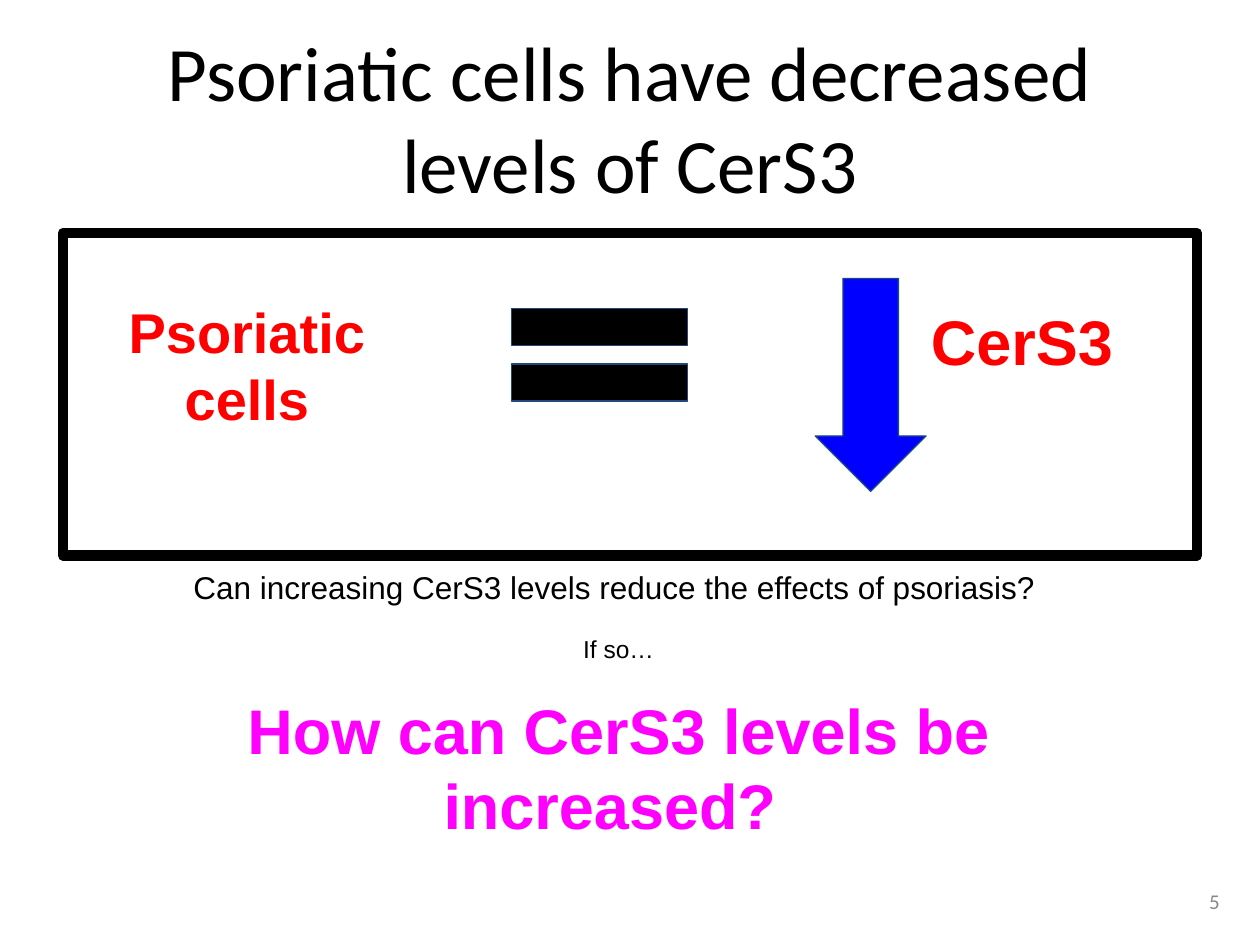
from lxml import etree
from pptx import Presentation
from pptx import util as u
from pptx.dml.color import RGBColor
from pptx.enum import shapes, text
from pptx.oxml.ns import qn

BLACK = RGBColor(0x00, 0x00, 0x00)
RED = RGBColor(0xFF, 0x00, 0x00)
BLUE = RGBColor(0x00, 0x00, 0xFF)
NAVY = RGBColor(0x1F, 0x49, 0x7D)
MAGENTA = RGBColor(0xFF, 0x00, 0xFF)
GREY = RGBColor(0x88, 0x88, 0x88)
CENTER, LEFT, RIGHT = text.PP_ALIGN.CENTER, text.PP_ALIGN.LEFT, text.PP_ALIGN.RIGHT
TOP, MIDDLE = text.MSO_ANCHOR.TOP, text.MSO_ANCHOR.MIDDLE


def add_text(page, left, top, width, height, lines, align=CENTER,
             font="Arial", anchor=TOP, inset=0.1, gap=0):
    """Add a text box; each line is (words, size, colour, bold)."""
    box = page.shapes.add_textbox(*map(u.Inches, (left, top, width, height)))
    frame = box.text_frame
    frame.word_wrap = True
    frame.vertical_anchor = anchor
    frame.margin_left = frame.margin_right = u.Inches(0.1)
    frame.margin_top = frame.margin_bottom = u.Inches(inset)
    for index, (words, size, colour, bold) in enumerate(lines):
        para = frame.add_paragraph() if index else frame.paragraphs[0]
        para.text = words
        para.alignment = align
        if index:
            para.space_before = u.Pt(gap)
        para.font.name = font
        para.font.size = u.Pt(size)
        para.font.bold = bold
        para.font.color.rgb = colour


def add_figure(page, kind, left, top, width, height, fill, line, weight):
    """Add a preset shape, unfilled when fill is None."""
    shape = page.shapes.add_shape(kind, *map(u.Inches, (left, top, width, height)))
    shape.shadow.inherit = False
    if fill is None:
        shape.fill.background()
    else:
        shape.fill.solid()
        shape.fill.fore_color.rgb = fill
    shape.line.color.rgb = line
    shape.line.width = u.Pt(weight)
    return shape


def add_equation(page, left, top, width, height):
    """Draw the framed statement: psoriatic cells equal less CerS3."""
    add_figure(page, shapes.MSO_SHAPE.DOWN_ARROW, left + 5.97, top + 0.36,
               0.88, 1.69, BLUE, NAVY, 0.75)
    add_text(page, left + 6.79, top + 0.45, 1.77, 1.03,
             [("CerS3", 36, RED, True)], LEFT)
    equals = add_figure(page, shapes.MSO_SHAPE.MATH_EQUAL, left + 3.31, top + 0.34,
                        1.9, 1.25, BLACK, NAVY, 0.75)
    equals.adjustments[0] = 0.235
    equals.adjustments[1] = 0.118
    add_text(page, left + 0.32, top + 0.41, 2.28, 0.74,
             [("Psoriatic cells", 32, RED, True)])
    frame = add_figure(page, shapes.MSO_SHAPE.RECTANGLE, left, top,
                       width, height, None, BLACK, 6)
    etree.SubElement(frame.line._get_or_add_ln(), qn("a:round"))


def add_questions(page, left, top, width, height):
    """Write the three centred questions below the frame."""
    add_text(page, left, top, width, height, [
        ("Can increasing CerS3 levels reduce the effects of psoriasis? ", 18, BLACK, False),
        ("If so…", 14, BLACK, False),
        ("How can CerS3 levels be increased? ", 36, MAGENTA, True),
    ], gap=16)


def main():
    """Build and save the slide."""
    deck = Presentation()
    deck.slide_width, deck.slide_height = u.Inches(10), u.Inches(7.5)
    page = deck.slides.add_slide(deck.slide_layouts[6])
    add_text(page, 7.45, 6.95, 2.33, 0.4, [("5", 12, GREY, False)],
             RIGHT, "Calibri", MIDDLE, 0.05)
    add_text(page, 0.5, 0.3, 9, 1.25,
             [("Psoriatic cells have decreased levels of CerS3", 44, BLACK, False)],
             CENTER, "Calibri", MIDDLE, 0.05)
    add_equation(page, 0.5, 1.85, 9, 2.56)
    add_questions(page, 1.38, 4.41, 7.06, 1.47)
    deck.save("out.pptx")


if __name__ == "__main__":
    main()
